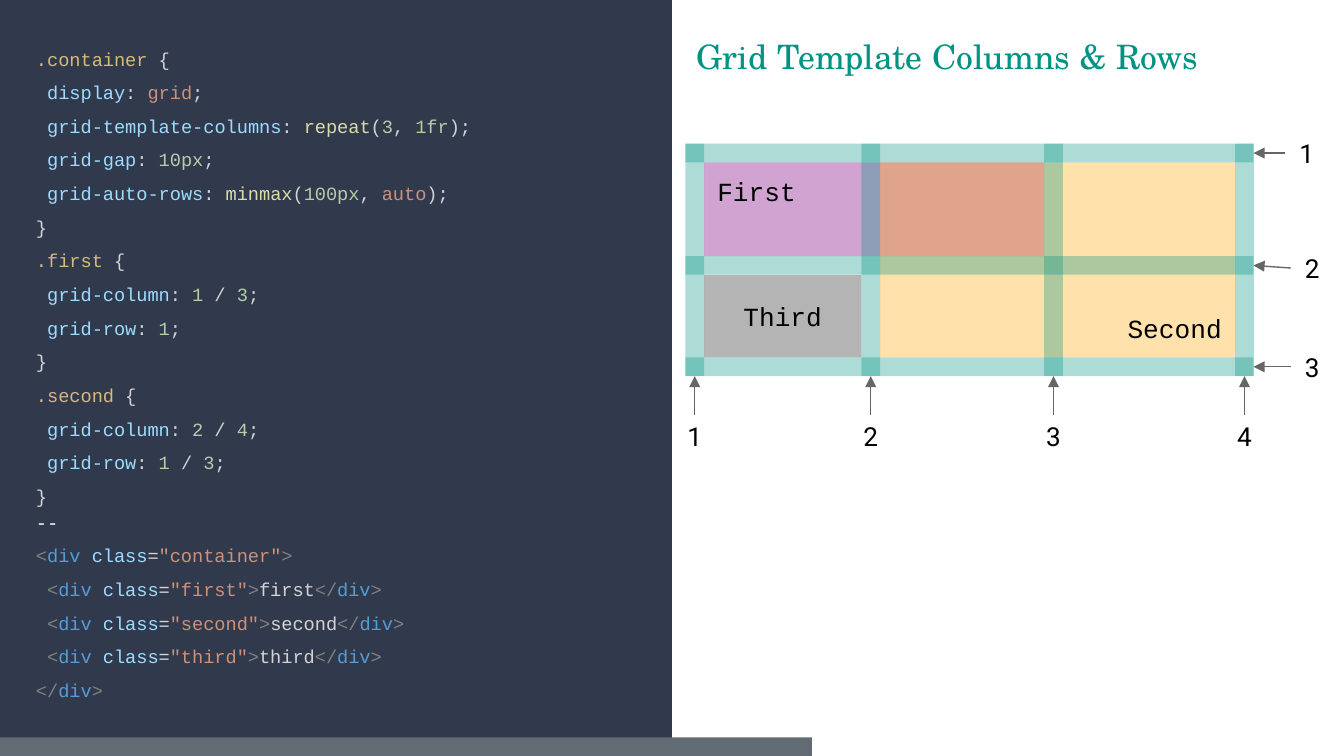
import dataclasses

import pptx
import pptx.dml.color
import pptx.enum.shapes
import pptx.enum.text
import pptx.oxml
import pptx.oxml.ns
import pptx.util

Pt = pptx.util.Pt
ALIGN = pptx.enum.text.PP_ALIGN
ANCHOR = pptx.enum.text.MSO_ANCHOR


@dataclasses.dataclass(frozen=True)
class Theme:
    panel: str = "31394D"
    footer: str = "626B73"
    teal: str = "009384"
    purple: str = "800080"
    orange: str = "FFA500"
    gray: str = "666666"
    ink: str = "000000"
    selector: str = "D7BA7D"
    plain: str = "D4D4D4"
    prop: str = "9CDCFE"
    literal: str = "CE9178"
    function: str = "DCDCAA"
    number: str = "B5CEA8"
    bracket: str = "808080"
    tag: str = "569CD6"
    separator: str = "FFFFFF"
    code_font: str = "Courier New"
    label_font: str = "Roboto"
    title_font: str = "TeX Gyre Schola"
    code_size: float = 10
    label_size: float = 14
    title_size: float = 18


THEME = Theme()


def rgb(value):
    return pptx.dml.color.RGBColor.from_string(value)


def write(holder, lines, font, size, color=THEME.ink, align=ALIGN.LEFT,
          anchor=ANCHOR.TOP, spacing=None):
    frame = holder.text_frame
    frame.word_wrap = True
    frame.vertical_anchor = anchor
    frame.margin_left = frame.margin_right = Pt(7.2)
    frame.margin_top = frame.margin_bottom = Pt(7.2)
    for index, line in enumerate(lines):
        paragraph = frame.add_paragraph() if index else frame.paragraphs[0]
        paragraph.alignment = align
        if spacing:
            paragraph.line_spacing = spacing[index]
        for words, run_color in [(line, color)] if isinstance(line, str) else line:
            run = paragraph.add_run()
            run.text = words
            run.font.name = font
            run.font.size = Pt(size)
            run.font.color.rgb = rgb(run_color)


def add_textbox(slide, box):
    return slide.shapes.add_textbox(*map(Pt, box))


def add_block(slide, box, color, opacity=100):
    block = slide.shapes.add_shape(
        pptx.enum.shapes.MSO_SHAPE.RECTANGLE, *map(Pt, box))
    block.shadow.inherit = False
    block.line.fill.background()
    block.fill.solid()
    block.fill.fore_color.rgb = rgb(color)
    if opacity < 100:
        tint = block.fill._xPr.find(".//" + pptx.oxml.ns.qn("a:srgbClr"))
        tint.append(pptx.oxml.parse_xml(
            f'<a:alpha {pptx.oxml.ns.nsdecls("a")} val="{opacity * 1000}"/>'))
    return block


def add_pointer(slide, grid_line, line_side, label, label_side):
    pointer = slide.shapes.add_connector(
        pptx.enum.shapes.MSO_CONNECTOR.STRAIGHT, 0, 0, 0, 0)
    pointer.begin_connect(grid_line, line_side)
    pointer.end_connect(label, label_side)
    pointer.line.color.rgb = rgb(THEME.gray)
    pointer.line.width = Pt(0.75)
    namespace = pptx.oxml.ns.nsdecls("a")
    pointer.line._get_or_add_ln().append(
        pptx.oxml.parse_xml(f'<a:headEnd {namespace} type="triangle"/>'))
    pointer._element.spPr.append(
        pptx.oxml.parse_xml(f"<a:effectLst {namespace}/>"))


def value_color(token):
    if token[0].isdigit():
        return THEME.number
    if token in ("repeat", "minmax"):
        return THEME.function
    return THEME.literal if token in ("grid", "auto") else THEME.plain


def declaration(name, *tokens):
    values = [(token, value_color(token)) for token in tokens]
    return [(" ", THEME.plain), (name, THEME.prop), (": ", THEME.plain),
            *values, (";", THEME.plain)]


def rule(selector, *declarations):
    return [[(selector, THEME.selector), (" {", THEME.plain)],
            *declarations, [("}", THEME.plain)]]


def opening_tag(name):
    return [("<", THEME.bracket), ("div ", THEME.tag), ("class", THEME.prop),
            ("=", THEME.plain), (f'"{name}"', THEME.literal), (">", THEME.bracket)]


def closing_tag():
    return [("</", THEME.bracket), ("div", THEME.tag), (">", THEME.bracket)]


def child(name):
    return [(" ", THEME.plain), *opening_tag(name), (name, THEME.plain), *closing_tag()]


def code_panel(slide, box):
    left, top, width, height = box
    add_block(slide, box, THEME.panel)
    styles = [
        *rule(".container",
              declaration("display", "grid"),
              declaration("grid-template-columns", "repeat", "(", "3", ", ", "1fr", ")"),
              declaration("grid-gap", "10px"),
              declaration("grid-auto-rows", "minmax", "(", "100px", ", ", "auto", ")")),
        *rule(".first",
              declaration("grid-column", "1", " / ", "3"),
              declaration("grid-row", "1")),
        *rule(".second",
              declaration("grid-column", "2", " / ", "4"),
              declaration("grid-row", "1", " / ", "3")),
    ]
    markup = [opening_tag("container"), *map(child, ("first", "second", "third")),
              closing_tag()]
    code = add_textbox(slide, (left + 12.2, top + 12.2, width - 26, height - 50))
    write(code, [*styles, [("--", THEME.separator)], *markup],
          THEME.code_font, THEME.code_size,
          spacing=[1.5] * len(styles) + [1.15] + [1.5] * len(markup))


def title(slide, box):
    write(add_textbox(slide, box), ["Grid Template Columns & Rows"],
          THEME.title_font, THEME.title_size, THEME.teal)


def grid_diagram(slide, box):
    left, top, width, height = box
    gap = 10
    columns = [left + offset for offset in (0, 94.3, 192.2, 294.5)]
    rows = [top + offset for offset in (0, 60.2, 114.5)]

    areas = (
        ("First", (1, 3), (1, 2), THEME.purple, 36, ALIGN.LEFT, ANCHOR.TOP),
        ("Second", (2, 4), (1, 3), THEME.orange, 33, ALIGN.RIGHT, ANCHOR.BOTTOM),
        ("Third", (1, 2), (2, 3), THEME.gray, 49, ALIGN.CENTER, ANCHOR.MIDDLE),
    )
    for name, (first, last), (upper, lower), color, opacity, align, anchor in areas:
        x, y = columns[first - 1] + gap, rows[upper - 1] + gap
        area = add_block(slide, (x, y, columns[last - 1] - x, rows[lower - 1] - y),
                         color, opacity)
        write(area, [name], THEME.code_font, THEME.label_size, align=align, anchor=anchor)

    label_width, label_height = 23, 22.3

    def number_line(number, line_box, line_side, label_at, label_side):
        grid_line = add_block(slide, line_box, THEME.teal, 32)
        label = add_textbox(slide, (*label_at, label_width, label_height))
        write(label, [str(number)], THEME.label_font, THEME.label_size,
              align=ALIGN.CENTER, anchor=ANCHOR.MIDDLE)
        add_pointer(slide, grid_line, line_side, label, label_side)

    for number, x in enumerate(columns, 1):
        number_line(number, (x, top, gap, height), 2,
                    (x + (gap - label_width) / 2, top + height + 21), 0)
    label_shifts = ((17, 0), (20, 1.4), (20, 0))
    for number, (y, (shift, drop)) in enumerate(zip(rows, label_shifts), 1):
        number_line(number, (left, y, width, gap), 3,
                    (left + width + shift, y + (gap - label_height) / 2 + drop), 1)


def footer(slide, box):
    add_block(slide, box, THEME.footer)


def main():
    deck = pptx.Presentation()
    deck.slide_width, deck.slide_height = Pt(720), Pt(405)
    slide = deck.slides.add_slide(deck.slide_layouts[6])
    code_panel(slide, (0, 0, 360, 405))
    grid_diagram(slide, (367.2, 77, 304.3, 124.5))
    title(slide, (366.2, 12.2, 334, 34))
    footer(slide, (0, 395, 435, 10))
    deck.save("out.pptx")


if __name__ == "__main__":
    main()
